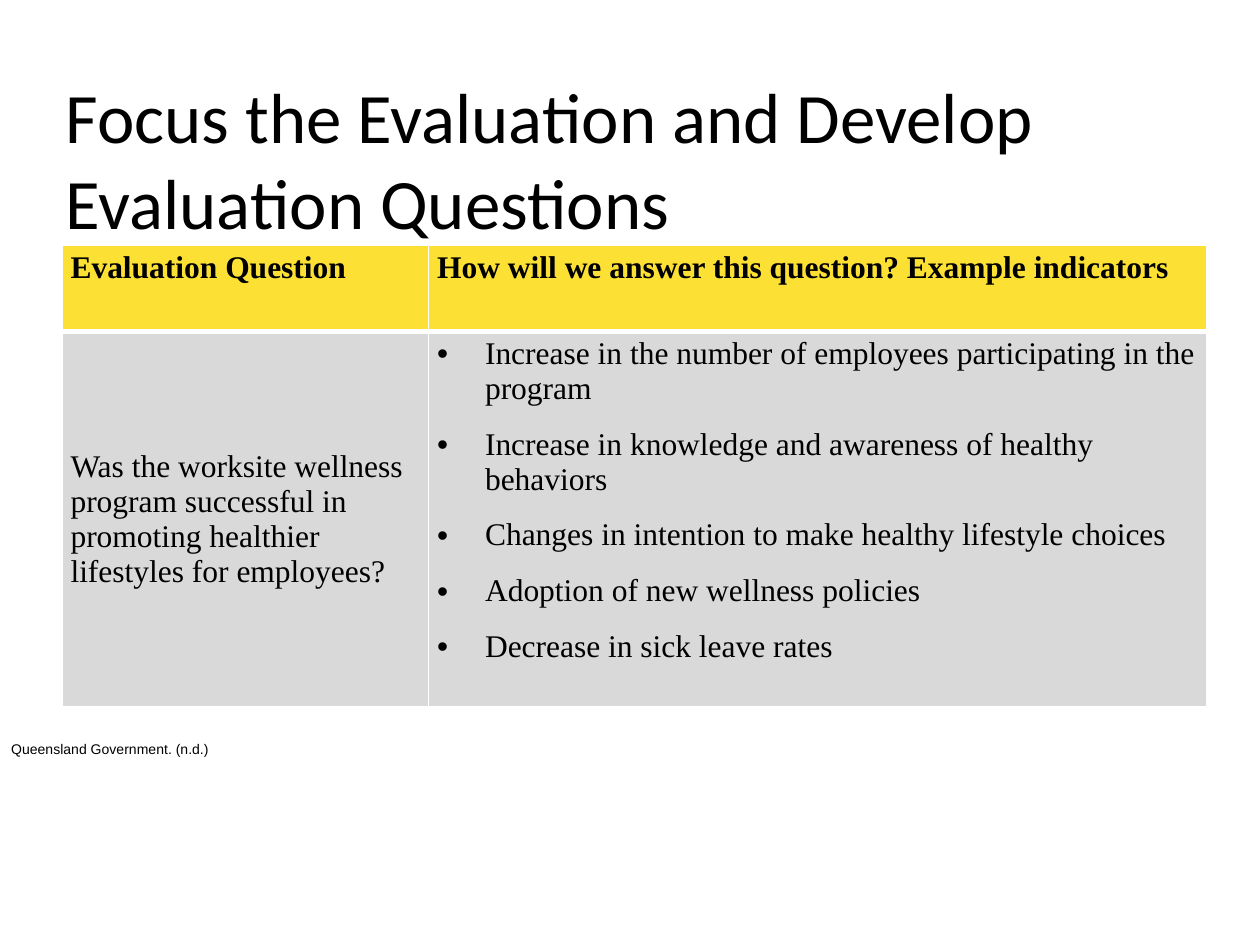
"""Build the slide on evaluation questions and their indicators."""
import pptx
import pptx.dml.color
import pptx.enum.text
import pptx.oxml
import pptx.oxml.ns
import pptx.util
from pptx.util import Inches

BLACK = pptx.dml.color.RGBColor(0x00, 0x00, 0x00)
WHITE = pptx.dml.color.RGBColor(0xFF, 0xFF, 0xFF)
YELLOW = pptx.dml.color.RGBColor(0xFC, 0xE0, 0x33)
GREY = pptx.dml.color.RGBColor(0xD9, 0xD9, 0xD9)
MIDDLE = pptx.enum.text.MSO_ANCHOR.MIDDLE
TOP = pptx.enum.text.MSO_ANCHOR.TOP
LEFT = pptx.enum.text.PP_ALIGN.LEFT

HEADINGS = ["Evaluation Question", "How will we answer this question? Example indicators"]
QUESTION = "Was the worksite wellness program successful in promoting healthier lifestyles for employees?"
INDICATORS = [
    "Increase in the number of employees participating in the program",
    "Increase in knowledge and awareness of healthy behaviors",
    "Changes in intention to make healthy lifestyle choices",
    "Adoption of new wellness policies",
    "Decrease in sick leave rates",
]


class EvaluationSlide:
    """Holds the text style and the slide being filled."""

    def __init__(self, deck):
        self.slide = deck.slides.add_slide(deck.slide_layouts[5])

    def style(self, paragraph, font_name, size, bold=False):
        paragraph.alignment = LEFT
        paragraph.font.name = font_name
        paragraph.font.size = pptx.util.Pt(size)
        paragraph.font.bold = bold
        paragraph.font.color.rgb = BLACK

    def title(self, wording, left, top, width, height):
        heading = self.slide.shapes.title
        heading.left, heading.top = Inches(left), Inches(top)
        heading.width, heading.height = Inches(width), Inches(height)
        heading.text_frame.text = wording
        heading.text_frame.vertical_anchor = MIDDLE
        heading.text_frame.auto_size = pptx.enum.text.MSO_AUTO_SIZE.NONE
        self.style(heading.text_frame.paragraphs[0], "Calibri", 40.5)

    def citation(self, wording, left, top, width, height):
        credit = self.slide.shapes.add_textbox(
            Inches(left), Inches(top), Inches(width), Inches(height))
        credit.text_frame.text = wording
        credit.text_frame.word_wrap = False
        credit.text_frame.auto_size = pptx.enum.text.MSO_AUTO_SIZE.SHAPE_TO_FIT_TEXT
        self.style(credit.text_frame.paragraphs[0], "Arial", 8)

    def table(self, left, top, column_widths, row_heights):
        grid = self.slide.shapes.add_table(
            len(row_heights), len(column_widths), Inches(left), Inches(top),
            Inches(sum(column_widths)), Inches(sum(row_heights))).table
        for column, width in zip(grid.columns, column_widths):
            column.width = Inches(width)
        for row, height in zip(grid.rows, row_heights):
            row.height = Inches(height)
        return grid

    def cell(self, cell, lines, fill, bold=False, anchor=TOP, bulleted=False, top_line=1, bottom_line=1):
        cell.text = "\n".join(lines)
        cell.vertical_anchor = anchor
        cell.margin_left = cell.margin_right = Inches(0.07)
        cell.margin_top = cell.margin_bottom = Inches(0.04)
        cell.fill.solid()
        cell.fill.fore_color.rgb = fill
        for paragraph in cell.text_frame.paragraphs:
            if bulleted:
                self.bullet(paragraph)
            self.style(paragraph, "Times New Roman", 18, bold)
        self.borders(cell, {"lnL": 1, "lnR": 1, "lnT": top_line, "lnB": bottom_line})

    def bullet(self, paragraph):
        properties = paragraph._p.get_or_add_pPr()
        properties.set("marL", str(Inches(0.38)))
        properties.set("indent", str(-Inches(0.38)))
        properties.append(pptx.oxml.parse_xml(
            f'<a:buFont {pptx.oxml.ns.nsdecls("a")} typeface="Arial"/>'))
        properties.append(pptx.oxml.parse_xml(
            f'<a:buChar {pptx.oxml.ns.nsdecls("a")} char="•"/>'))
        paragraph.space_after = pptx.util.Pt(12)

    def borders(self, cell, edges):
        properties = cell._tc.get_or_add_tcPr()
        for position, (edge, points) in enumerate(edges.items()):
            properties.insert(position, pptx.oxml.parse_xml(
                f'<a:{edge} {pptx.oxml.ns.nsdecls("a")} w="{pptx.util.Pt(points)}">'
                f'<a:solidFill><a:srgbClr val="{WHITE}"/></a:solidFill></a:{edge}>'))


def main():
    deck = pptx.Presentation()
    deck.slide_width, deck.slide_height = Inches(10), Inches(7.5)
    page = EvaluationSlide(deck)
    page.title("Focus the Evaluation and Develop Evaluation Questions", 0.42, 0.84, 9.15, 0.83)
    page.citation("Queensland Government. (n.d.)", -0.01, 5.83, 1.79, 0.24)
    questions = page.table(0.49, 1.95, [2.91, 6.18], [0.68, 2.98])
    for column, heading in enumerate(HEADINGS):
        page.cell(questions.cell(0, column), [heading], YELLOW, bold=True, bottom_line=3)
    page.cell(questions.cell(1, 0), [QUESTION], GREY, anchor=MIDDLE, top_line=3)
    page.cell(questions.cell(1, 1), INDICATORS, GREY, bulleted=True, top_line=3)
    deck.save("out.pptx")


if __name__ == "__main__":
    main()
